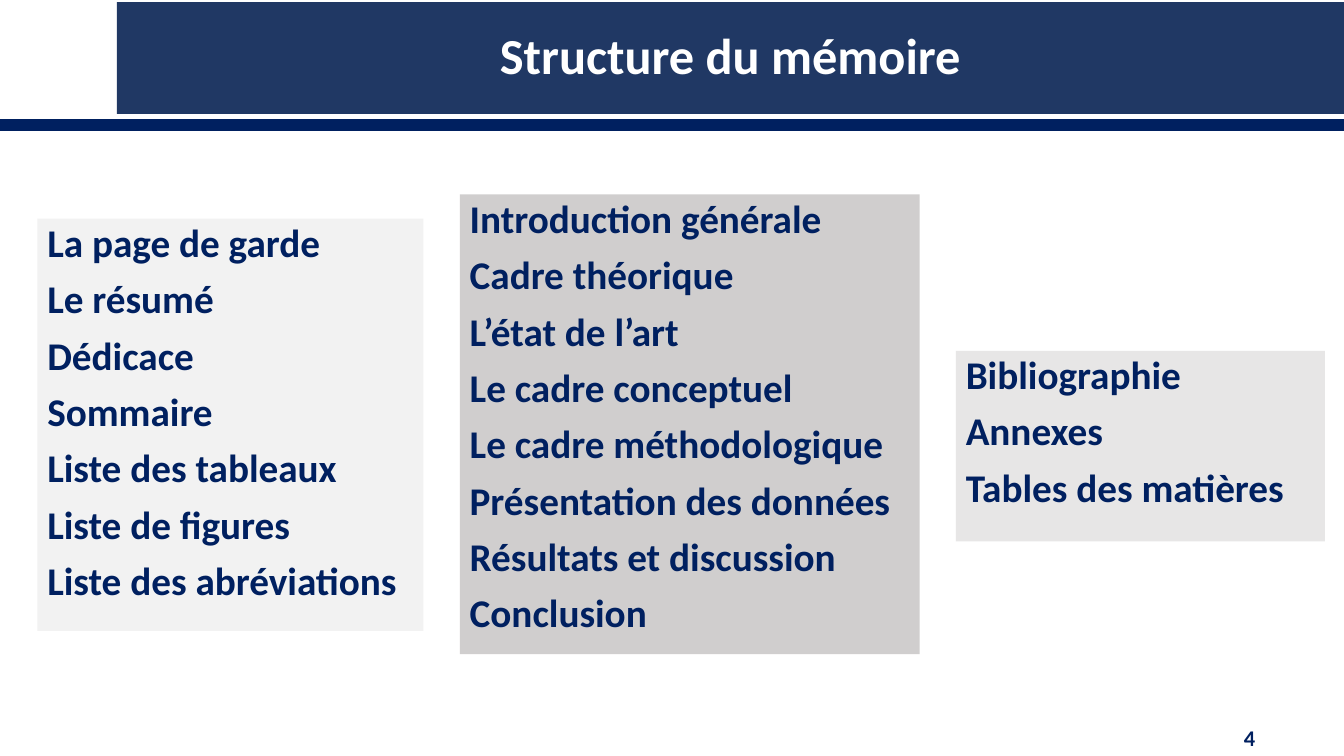
import pptx
import pptx.dml.color
import pptx.enum.shapes
import pptx.enum.text
import pptx.oxml.ns
import pptx.util
from lxml import etree

COLOURS = {
    "navy": "002060",
    "banner": "203864",
    "white": "FFFFFF",
    "front": "F2F2F2",
    "body": "D0CECE",
    "back": "E7E6E6",
}
ANCHOR = pptx.enum.text.MSO_ANCHOR
ALIGN = pptx.enum.text.PP_ALIGN


def colour(name):
    return pptx.dml.color.RGBColor.from_string(COLOURS[name])


class Deck:
    """Holds the style and the current slide; lengths are percent of the slide."""

    font = {"name": "Calibri", "bold": True}

    def __init__(self, width, height):
        self.show = pptx.Presentation()
        self.show.slide_width = pptx.util.Inches(width)
        self.show.slide_height = pptx.util.Inches(height)
        self.slide = self.show.slides.add_slide(self.show.slide_layouts[6])

    def across(self, share):
        return round(self.show.slide_width * share / 100)

    def down(self, share):
        return round(self.show.slide_height * share / 100)

    def place(self, left, top, width, height):
        return self.across(left), self.down(top), self.across(width), self.down(height)

    def set_text(self, holder, lines, size, ink, anchor, paragraph_format):
        frame = holder.text_frame
        frame.word_wrap = True
        frame.vertical_anchor = anchor
        font_format = {**self.font, "size": pptx.util.Pt(size)}
        for index, line in enumerate(lines):
            paragraph = frame.add_paragraph() if index else frame.paragraphs[0]
            paragraph.text = line
            for key, value in paragraph_format.items():
                if index or key != "space_before":
                    setattr(paragraph, key, value)
            for key, value in font_format.items():
                setattr(paragraph.font, key, value)
            paragraph.font.color.rgb = colour(ink)

    def panel(self, area, fill, lines, size, ink, anchor=ANCHOR.TOP, **paragraph_format):
        panel = self.slide.shapes.add_shape(
            pptx.enum.shapes.MSO_SHAPE.RECTANGLE, *self.place(*area))
        panel.shadow.inherit = False
        panel.fill.solid()
        panel.fill.fore_color.rgb = colour(fill)
        panel.line.fill.background()
        self.set_text(panel, lines, size, ink, anchor,
                      {"alignment": ALIGN.LEFT, "line_spacing": 0.9, **paragraph_format})

    def label(self, area, text, size, ink):
        label = self.slide.shapes.add_textbox(*self.place(*area))
        self.set_text(label, [text], size, ink, ANCHOR.MIDDLE, {"alignment": ALIGN.LEFT})

    def rule(self, top, weight, ink):
        rule = self.slide.shapes.add_connector(
            pptx.enum.shapes.MSO_CONNECTOR.STRAIGHT,
            self.across(100), self.down(top), 0, self.down(top))
        rule.line.width = pptx.util.Pt(weight)
        rule.line.color.rgb = colour(ink)
        etree.SubElement(rule._element.spPr, pptx.oxml.ns.qn("a:effectLst"))


# Thesis parts: fill, width, height, vertical centre, contents
THESIS_PARTS = [
    ("front", 28.73, 54.53, 56.2, [
        "La page de garde", "Le résumé", "Dédicace", "Sommaire",
        "Liste des tableaux", "Liste de figures", "Liste des abréviations"]),
    ("body", 34.21, 60.8, 56.13, [
        "Introduction générale", "Cadre théorique", "L’état de l’art",
        "Le cadre conceptuel", "Le cadre méthodologique",
        "Présentation des données", "Résultats et discussion", "Conclusion"]),
    ("back", 27.46, 25.2, 59, [
        "Bibliographie", "Annexes", "Tables des matières"]),
]
MARGIN, GAP = 2.78, 2.7


def main():
    deck = Deck(13.33, 7.5)

    # Header
    deck.rule(16.53, 8.25, "navy")
    deck.panel((8.7, 0.27, 91.3, 14.8), "banner", ["Structure du mémoire"], 36, "white",
               ANCHOR.MIDDLE, alignment=ALIGN.CENTER)

    # Three parts of the thesis, side by side
    left = MARGIN
    for fill, width, height, centre, contents in THESIS_PARTS:
        deck.panel((left, centre - height / 2, width, height), fill, contents, 28, "navy",
                   space_before=pptx.util.Pt(10))
        left += width + GAP

    # Page number
    deck.label((91.82, 94.93, 5.25, 5.33), "4", 16, "navy")

    deck.show.save("out.pptx")


if __name__ == "__main__":
    main()
